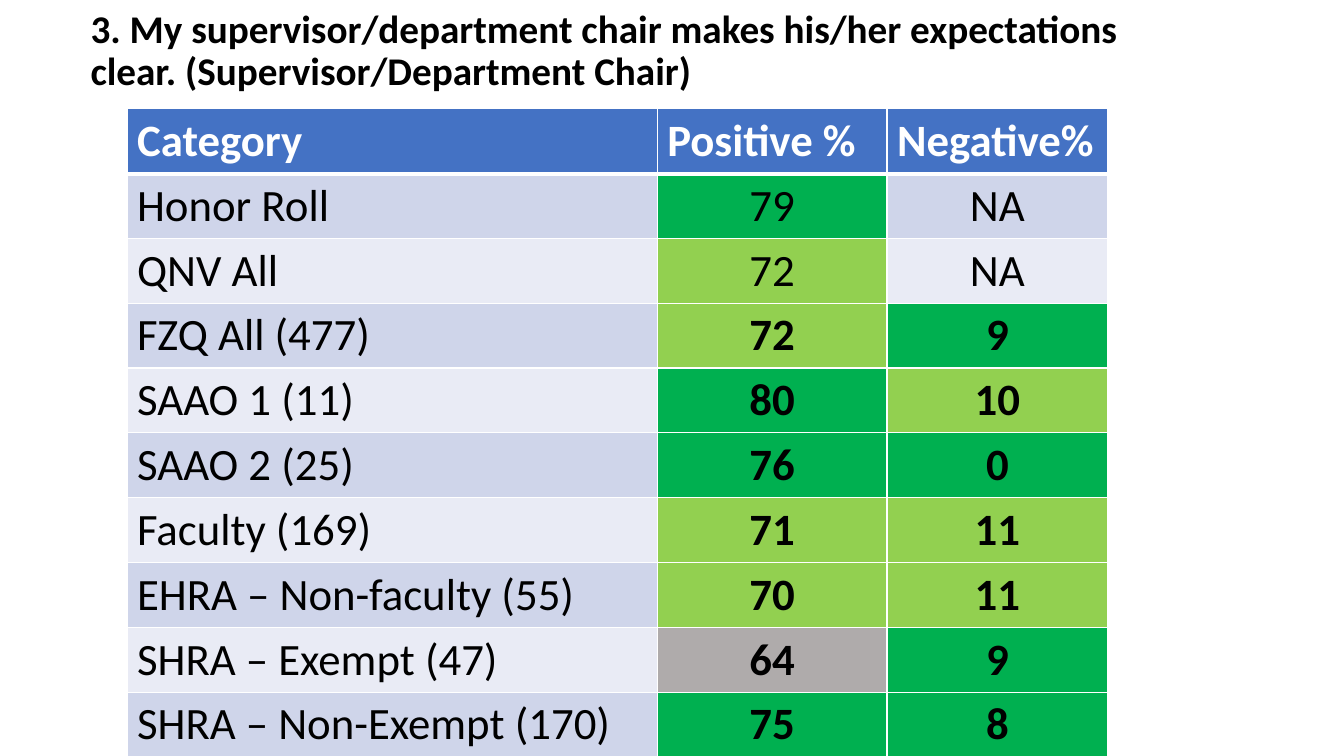
from lxml.etree import SubElement
from pptx import Presentation
from pptx.dml.color import RGBColor
from pptx.enum.text import MSO_ANCHOR, PP_ALIGN
from pptx.oxml.ns import qn
from pptx.util import Pt

FONT = "Calibri"
BLACK = RGBColor(0x00, 0x00, 0x00)
WHITE = RGBColor(0xFF, 0xFF, 0xFF)
BLUE = RGBColor(0x44, 0x72, 0xC4)
BANDS = (RGBColor(0xCF, 0xD5, 0xEA), RGBColor(0xE9, 0xEB, 0xF5))
GREEN = RGBColor(0x00, 0xB0, 0x50)
LIME = RGBColor(0x92, 0xD0, 0x50)
GRAY = RGBColor(0xAF, 0xAB, 0xAB)

TITLE = ("3. My supervisor/department chair makes his/her expectations clear. "
         "(Supervisor/Department Chair)")
HEADER = ("Category", "Positive %", "Negative%")
RATINGS = (
    ("Honor Roll", 79, "NA"),
    ("QNV All", 72, "NA"),
    ("FZQ All (477)", 72, 9),
    ("SAAO 1 (11)", 80, 10),
    ("SAAO 2 (25)", 76, 0),
    ("Faculty (169)", 71, 11),
    ("EHRA – Non-faculty (55)", 70, 11),
    ("SHRA – Exempt (47)", 64, 9),
    ("SHRA – Non-Exempt (170)", 75, 8),
)
COL_WIDTHS = (378.72, 164.16, 157.68)
ROW_HEIGHT = 46.3


def format_text(p, size, color, bold):
    """Set the font of every run in a paragraph."""
    for r in p.runs:
        r.font.name = FONT
        r.font.size = Pt(size)
        r.font.color.rgb = color
        r.font.bold = bold


def add_title(s, text):
    """Add the survey question above the table."""
    sp = s.shapes.add_textbox(Pt(57.6), Pt(11.52), Pt(803.52), Pt(51.12))
    tf = sp.text_frame
    tf.word_wrap = True
    tf.vertical_anchor = MSO_ANCHOR.MIDDLE
    tf.text = text
    p = tf.paragraphs[0]
    p.line_spacing = 0.9
    format_text(p, 28, BLACK, True)


def set_borders(cell, top, bottom):
    """Draw white cell borders with the given top and bottom widths."""
    tc_pr = cell._tc.get_or_add_tcPr()
    for tag, width in (("lnL", 1), ("lnR", 1), ("lnT", top), ("lnB", bottom)):
        ln = SubElement(tc_pr, qn(f"a:{tag}"), w=str(Pt(width)))
        fill = SubElement(ln, qn("a:solidFill"))
        SubElement(fill, qn("a:srgbClr"), val=str(WHITE))


def fill_cell(cell, text, fill, color, bold, centered, top=1, bottom=1):
    """Write and style one table cell."""
    cell.text = str(text)
    p = cell.text_frame.paragraphs[0]
    p.alignment = PP_ALIGN.CENTER if centered else PP_ALIGN.LEFT
    format_text(p, 32, color, bold)
    set_borders(cell, top, bottom)
    cell.fill.solid()
    cell.fill.fore_color.rgb = fill


def rating_color(col, value, band):
    """Return the fill that a value earns in its column."""
    if col == 0 or value == "NA":
        return band
    if col == 1:
        return GREEN if value >= 75 else LIME if value >= 65 else GRAY
    return GREEN if value < 10 else LIME


def add_ratings(s):
    """Add the table of ratings by employee category."""
    n = len(RATINGS) + 1
    table = s.shapes.add_table(n, len(HEADER), Pt(90.72), Pt(77.76),
                               Pt(sum(COL_WIDTHS)), Pt(n * ROW_HEIGHT)).table
    for row in table.rows:
        row.height = Pt(ROW_HEIGHT)
    for col, (label, width) in enumerate(zip(HEADER, COL_WIDTHS)):
        table.columns[col].width = Pt(width)
        fill_cell(table.cell(0, col), label, BLUE, WHITE, True, False, bottom=3)
    for i, values in enumerate(RATINGS, start=1):
        band = BANDS[(i - 1) % 2]
        for col, value in enumerate(values):
            fill_cell(table.cell(i, col), value, rating_color(col, value, band),
                      BLACK, col > 0 and i > 2, col > 0, top=3 if i == 1 else 1)


def main():
    """Build and save the slide."""
    prs = Presentation()
    prs.slide_width, prs.slide_height = Pt(960), Pt(540)
    s = prs.slides.add_slide(prs.slide_layouts[6])
    add_title(s, TITLE)
    add_ratings(s)
    prs.save("out.pptx")


if __name__ == "__main__":
    main()
